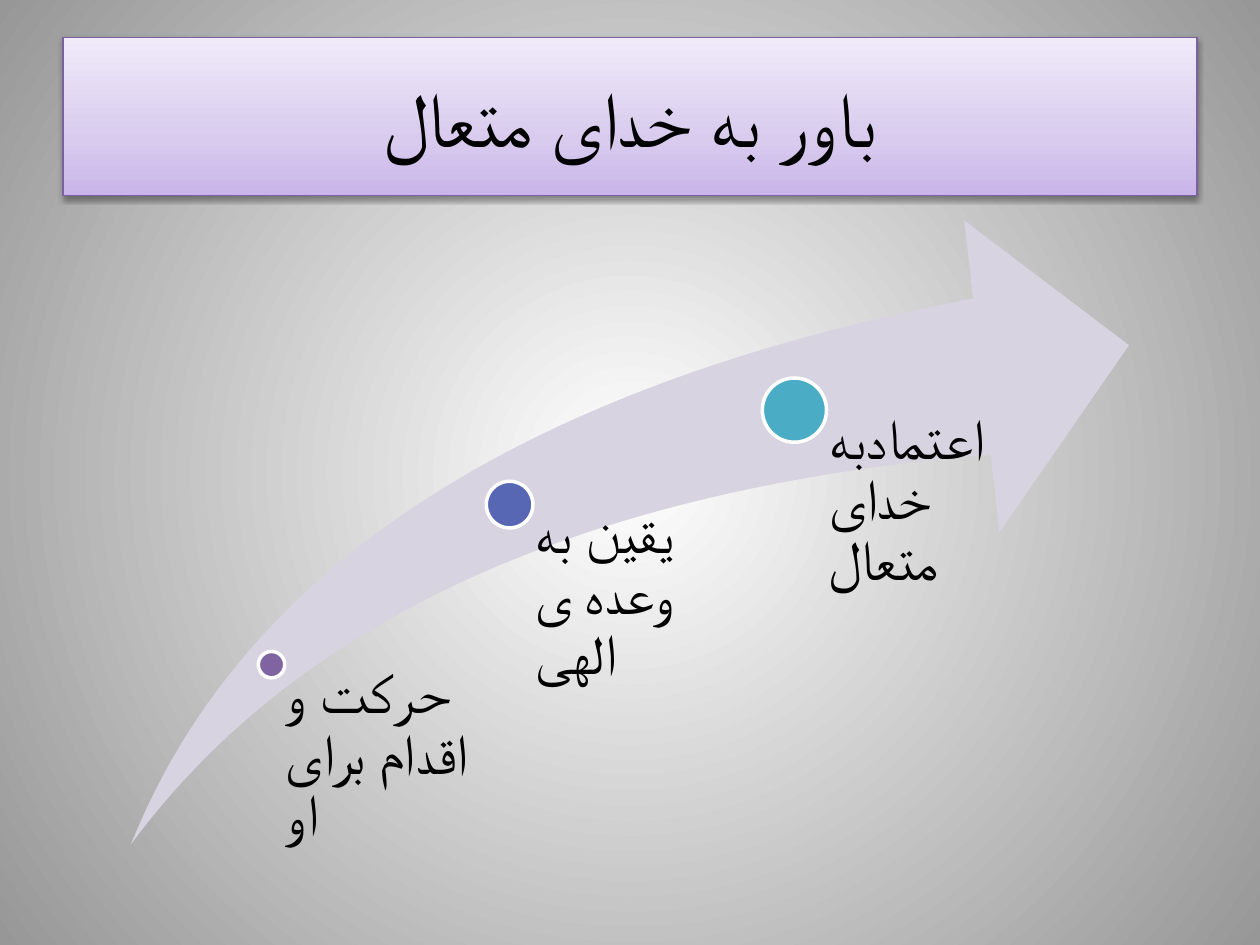
import pptx
import pptx.util
import pptx.dml.color
import pptx.enum.shapes
import pptx.enum.text
import pptx.oxml
import pptx.oxml.ns

RGB = pptx.dml.color.RGBColor
SHAPE = pptx.enum.shapes.MSO_SHAPE
ALIGN = pptx.enum.text.PP_ALIGN
ANCHOR = pptx.enum.text.MSO_ANCHOR

PX = 9144  # 100 px to the inch
FONT = "Calibri"
BLACK = RGB(0x00, 0x00, 0x00)
WHITE = RGB(0xFF, 0xFF, 0xFF)
GRAY = RGB(0x97, 0x97, 0x97)
LILAC = RGB(0xC9, 0xB5, 0xE8)
LILAC_MID = RGB(0xD8, 0xCB, 0xEE)
LILAC_PALE = RGB(0xF0, 0xEA, 0xF9)
PURPLE_EDGE = RGB(0x7D, 0x60, 0xA0)
SWOOSH = RGB(0xD8, 0xD3, 0xE0)
PURPLE = RGB(0x80, 0x64, 0xA2)
INDIGO = RGB(0x57, 0x67, 0xB4)
TEAL = RGB(0x4B, 0xAC, 0xC6)

# left and top within the diagram, diameter, text width, colour, wording
STEPS = [
    (101, 342, 21, 185, PURPLE, "حرکت و اقدام برای او"),
    (282, 207, 37, 190, INDIGO, "یقین به وعده ی الهی"),
    (501, 125, 51, 190, TEAL, "اعتمادبه خدای متعال"),
]


def emu(box):
    return [pptx.util.Emu(length * PX) for length in box]


def parse_drawing(xml):
    return pptx.oxml.parse_xml(xml.replace(">", f" {pptx.oxml.ns.nsdecls('a')}>", 1))


def set_gradient(owner, fill, stops, direction):
    """Fill with (percent, colour) stops along a direction given as XML."""
    fill.gradient()
    stop_xml = "".join(
        f'<a:gs pos="{percent * 1000}"><a:srgbClr val="{color}"/></a:gs>'
        for percent, color in stops)
    gradient = owner.find(".//" + pptx.oxml.ns.qn("a:gradFill"))
    gradient.getparent().replace(gradient, parse_drawing(
        f'<a:gradFill rotWithShape="1"><a:gsLst>{stop_xml}</a:gsLst>{direction}</a:gradFill>'))


def add_shape(parent, kind, box, fill=None, line=None, width=1):
    shape = parent.shapes.add_shape(kind, *emu(box))
    shape.shadow.inherit = False
    if fill is not None:
        shape.fill.solid()
        shape.fill.fore_color.rgb = fill
    if line is None:
        shape.line.fill.background()
    else:
        shape.line.color.rgb = line
        shape.line.width = pptx.util.Pt(width)
    return shape


def write_text(shape, text, size, align=ALIGN.LEFT, anchor=ANCHOR.TOP,
               insets=(10, 5, 10, 5), spacing=None):
    frame = shape.text_frame
    frame.word_wrap = True
    frame.vertical_anchor = anchor
    (frame.margin_left, frame.margin_top,
     frame.margin_right, frame.margin_bottom) = emu(insets)
    para = frame.paragraphs[0]
    para.alignment = align
    if spacing:
        para.line_spacing = spacing
    span = para.add_run()
    span.text = text
    span.font.name = FONT
    span.font.size = pptx.util.Pt(size)
    span.font.color.rgb = BLACK


def paint_background(page):
    set_gradient(
        page.element, page.background.fill, [(0, WHITE), (100, GRAY)],
        '<a:path path="circle"><a:fillToRect l="50000" t="50000" r="50000" b="50000"/></a:path>')


def add_title(page, box, text):
    banner = add_shape(page, SHAPE.RECTANGLE, box, line=PURPLE_EDGE, width=0.75)
    set_gradient(banner.element, banner.fill,
                 [(0, LILAC), (35, LILAC_MID), (100, LILAC_PALE)],
                 '<a:lin ang="16200000" scaled="1"/>')
    # Soft shadow below the banner
    effects = banner.element.spPr.find(pptx.oxml.ns.qn("a:effectLst"))
    effects.append(parse_drawing(
        '<a:outerShdw blurRad="40000" dist="20000" dir="5400000" rotWithShape="0">'
        '<a:srgbClr val="000000"><a:alpha val="38000"/></a:srgbClr></a:outerShdw>'))
    write_text(banner, text, 44, align=ALIGN.CENTER, anchor=ANCHOR.MIDDLE)


def add_rising_arrow(page, box, steps):
    left, top, _, height = box
    group = page.shapes.add_group_shape()
    arrow = add_shape(group, SHAPE.SWOOSH_ARROW, box, fill=SWOOSH)
    arrow.adjustments[0] = arrow.adjustments[1] = 0.25

    # Each text starts at the centre of its dot and runs to the foot of the box
    for dx, dy, size, width, color, text in steps:
        add_shape(group, SHAPE.OVAL, (left + dx, top + dy, size, size),
                  fill=color, line=WHITE, width=2)
        half = (size + 1) // 2
        label = group.shapes.add_textbox(*emu(
            (left + dx + half, top + dy + half, width, height - dy - half)))
        write_text(label, text, 32, insets=(round(size * 0.53), 0, 0, 0), spacing=0.9)


def main():
    deck = pptx.Presentation()
    deck.slide_width, deck.slide_height = emu((1000, 750))
    page = deck.slides.add_slide(deck.slide_layouts[6])
    paint_background(page)
    add_title(page, (50, 30, 900, 125), "باور به خدای متعال")
    add_rising_arrow(page, (104, 175, 792, 495), STEPS)
    deck.save("out.pptx")


if __name__ == "__main__":
    main()
